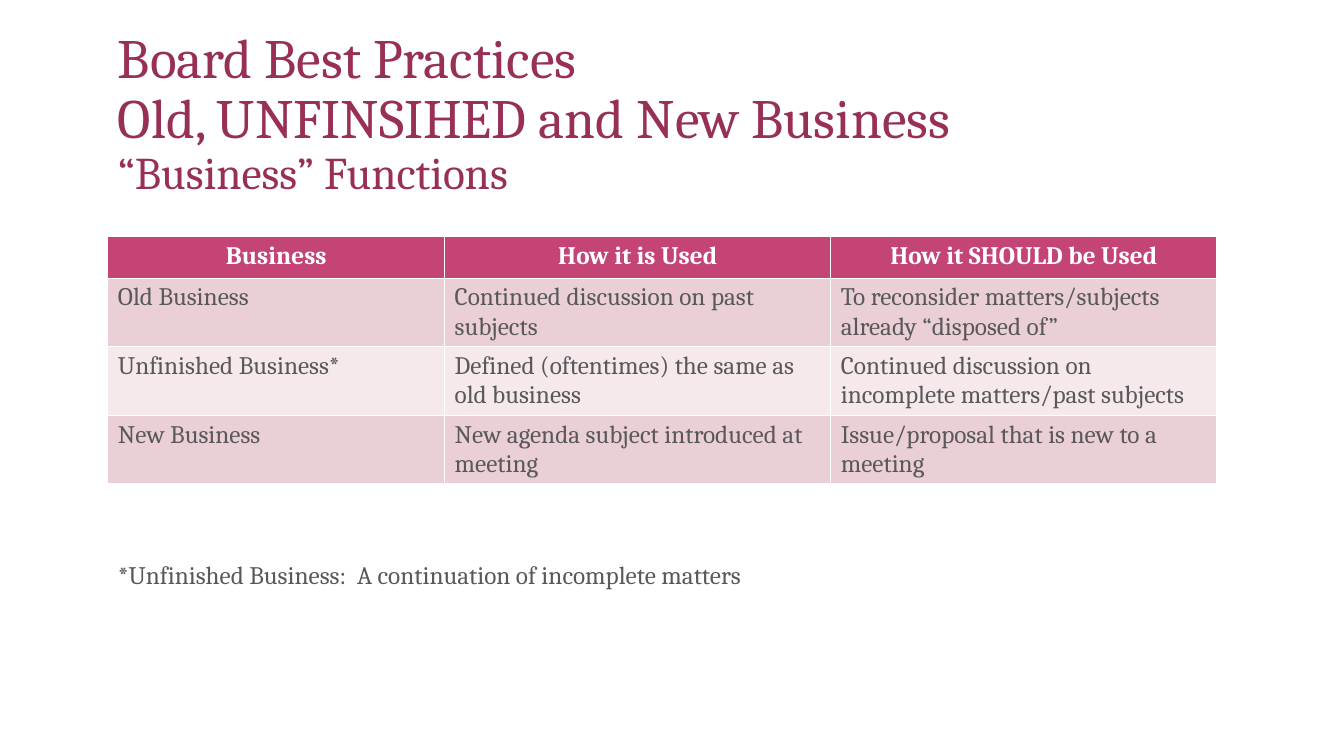
from pptx import Presentation
from pptx.dml.color import RGBColor
from pptx.enum.text import MSO_ANCHOR, MSO_AUTO_SIZE, PP_ALIGN
from pptx.util import Inches, Pt

COLORS = {
    "title": "972F57",
    "body": "595959",
    "header_text": "FFFFFF",
    "header_fill": "C44475",
    "odd_row": "EACFD6",
    "even_row": "F5E9EC",
}
LEFT, WIDTH = 1.07, 11
COLUMN_WIDTHS = [3.34, 3.83, 3.83]
HEADER_HEIGHT, ROW_HEIGHT = 0.41, 0.68

TITLE_LINES = [
    ("Board Best Practices", 39.6),
    ("Old, UNFINSIHED and New Business", 39.6),
    ("“Business” Functions", 32.4),
]
BUSINESS_ROWS = [
    ["Business", "How it is Used", "How it SHOULD be Used"],
    ["Old Business", "Continued discussion on past subjects",
     "To reconsider matters/subjects already “disposed of”"],
    ["Unfinished Business*", "Defined (oftentimes) the same as old business",
     "Continued discussion on incomplete matters/past subjects"],
    ["New Business", "New agenda subject introduced at meeting",
     "Issue/proposal that is new to a meeting"],
]
FOOTNOTE = "*Unfinished Business:  A continuation of incomplete matters"


def add_text(paragraph, text, color, size=18, bold=False):
    run = paragraph.add_run()
    run.text = text
    font_format = {"name": "Cambria", "size": Pt(size), "bold": bold}
    for attribute, value in font_format.items():
        setattr(run.font, attribute, value)
    run.font.color.rgb = RGBColor.from_string(COLORS[color])


def fill_title(title):
    position = {"left": LEFT, "top": 0.73, "width": WIDTH, "height": 1.3}
    for attribute, value in position.items():
        setattr(title, attribute, Inches(value))
    frame_format = {
        "vertical_anchor": MSO_ANCHOR.BOTTOM,
        "auto_size": MSO_AUTO_SIZE.NONE,
        "word_wrap": True,
    }
    for attribute, value in frame_format.items():
        setattr(title.text_frame, attribute, value)
    heading = title.text_frame.paragraphs[0]
    heading.alignment = PP_ALIGN.LEFT
    heading.line_spacing = 0.9
    for index, (line, size) in enumerate(TITLE_LINES):
        if index:
            heading.add_line_break()
        add_text(heading, line, "title", size)


def fill_cell(cell, text, row_index):
    is_header = row_index == 0
    if is_header:
        fill = "header_fill"
    else:
        fill = "odd_row" if row_index % 2 else "even_row"
    cell.fill.solid()
    cell.fill.fore_color.rgb = RGBColor.from_string(COLORS[fill])
    paragraph = cell.text_frame.paragraphs[0]
    paragraph.alignment = PP_ALIGN.CENTER if is_header else PP_ALIGN.LEFT
    add_text(paragraph, text, "header_text" if is_header else "body", bold=is_header)


def add_business_table(slide):
    row_heights = [HEADER_HEIGHT] + [ROW_HEIGHT] * (len(BUSINESS_ROWS) - 1)
    business = slide.shapes.add_table(
        len(BUSINESS_ROWS), len(COLUMN_WIDTHS), Inches(LEFT), Inches(2.35),
        Inches(WIDTH), Inches(sum(row_heights))).table
    for column, width in zip(business.columns, COLUMN_WIDTHS):
        column.width = Inches(width)
    for row_index, (texts, height) in enumerate(zip(BUSINESS_ROWS, row_heights)):
        business.rows[row_index].height = Inches(height)
        for column_index, text in enumerate(texts):
            fill_cell(business.cell(row_index, column_index), text, row_index)


def add_footnote(slide):
    footnote = slide.shapes.add_textbox(
        Inches(LEFT), Inches(5.5), Inches(WIDTH), Inches(0.4)).text_frame
    footnote.word_wrap = True
    footnote.auto_size = MSO_AUTO_SIZE.SHAPE_TO_FIT_TEXT
    add_text(footnote.paragraphs[0], FOOTNOTE, "body")


def main():
    deck = Presentation()
    deck.slide_width, deck.slide_height = Inches(13.33), Inches(7.5)
    slide = deck.slides.add_slide(deck.slide_layouts[5])

    # Heading
    fill_title(slide.shapes.title)
    # Comparison of business types
    add_business_table(slide)
    # Definition below the table
    add_footnote(slide)

    deck.save("out.pptx")


if __name__ == "__main__":
    main()
